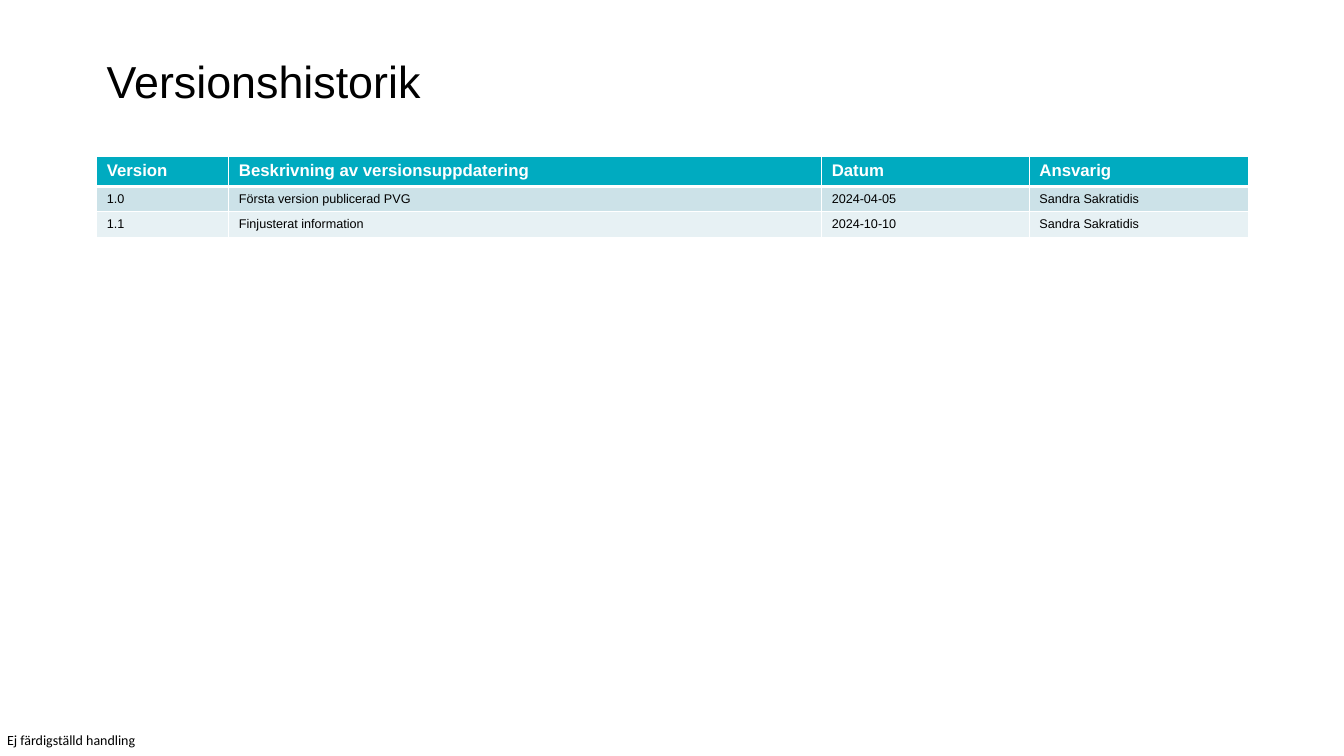
import pptx
import pptx.dml.color
import pptx.enum.text
import pptx.oxml
import pptx.oxml.ns
import pptx.util

COLORS = {
    "text": "000000",
    "white": "FFFFFF",
    "header": "00ABC0",
    "odd": "CCE2E8",
    "even": "E7F1F4",
}
COLUMN_WIDTHS = [9.83, 44.11, 15.45, 16.28]  # percent of slide width
HEADER_HEIGHT, ROW_HEIGHT = 3.87, 3.27  # percent of slide height
VERSIONS = [
    ["Version", "Beskrivning av versionsuppdatering", "Datum", "Ansvarig"],
    ["1.0", "Första version publicerad PVG", "2024-04-05", "Sandra Sakratidis"],
    ["1.1", "Finjusterat information", "2024-10-10", "Sandra Sakratidis"],
]


class SlideBuilder:
    """Places elements by percent of the slide's size."""

    def __init__(self, prs):
        self.prs = prs
        self.s = prs.slides.add_slide(prs.slide_layouts[6])

    def x(self, percent):
        return round(self.prs.slide_width * percent / 100)

    def y(self, percent):
        return round(self.prs.slide_height * percent / 100)

    def run(self, p, text, size, color="text", font="Arial", bold=False):
        r = p.add_run()
        r.text = text
        r.font.name, r.font.size, r.font.bold = font, pptx.util.Pt(size), bold
        r.font.color.rgb = pptx.dml.color.RGBColor.from_string(COLORS[color])

    def text(self, text, left, top, width, height, size, font="Arial", inset=(0, 0)):
        sp = self.s.shapes.add_textbox(
            self.x(left), self.y(top), self.x(width), self.y(height))
        tf = sp.text_frame
        tf.word_wrap = True
        tf.margin_left = tf.margin_right = pptx.util.Inches(inset[0])
        tf.margin_top = tf.margin_bottom = pptx.util.Inches(inset[1])
        self.run(tf.paragraphs[0], text, size, font=font)

    def borders(self, cell, bottom):
        tc_pr = cell._tc.get_or_add_tcPr()
        for side, points in {"L": 1, "R": 1, "T": 1, "B": bottom}.items():
            tc_pr.append(pptx.oxml.parse_xml(
                f'<a:ln{side} {pptx.oxml.ns.nsdecls("a")} w="{pptx.util.Pt(points)}">'
                f'<a:solidFill><a:srgbClr val="{COLORS["white"]}"/></a:solidFill>'
                f'</a:ln{side}>'))

    def table(self, rows, left, top, widths):
        heights = [HEADER_HEIGHT] + [ROW_HEIGHT] * (len(rows) - 1)
        table = self.s.shapes.add_table(
            len(rows), len(widths), self.x(left), self.y(top),
            self.x(sum(widths)), self.y(sum(heights))).table
        for column, width in zip(table.columns, widths):
            column.width = self.x(width)
        for i, values in enumerate(rows):
            table.rows[i].height = self.y(heights[i])
            header = i == 0
            fill = "header" if header else ("even", "odd")[i % 2]
            for j, value in enumerate(values):
                cell = table.cell(i, j)
                self.borders(cell, bottom=3 if header else 1)
                cell.fill.solid()
                cell.fill.fore_color.rgb = pptx.dml.color.RGBColor.from_string(COLORS[fill])
                if not header and j % 2 == 0:
                    cell.vertical_anchor = pptx.enum.text.MSO_ANCHOR.MIDDLE
                self.run(cell.text_frame.paragraphs[0], value, 12 if header else 9,
                         "white" if header else "text", bold=header)


def main():
    prs = pptx.Presentation()
    prs.slide_width = pptx.util.Inches(13.33)
    prs.slide_height = pptx.util.Inches(7.5)
    slide = SlideBuilder(prs)

    # Document status
    slide.text("Ej färdigställd handling", 0.53, 96.8, 12, 2.27, 10, font="Calibri")

    # Title
    slide.text("Versionshistorik", 7.2, 5.73, 85.67, 6.27, 32, inset=(0.1, 0.1))

    # Version history
    slide.table(VERSIONS, 7.2, 20.67, COLUMN_WIDTHS)

    prs.save("out.pptx")


if __name__ == "__main__":
    main()
